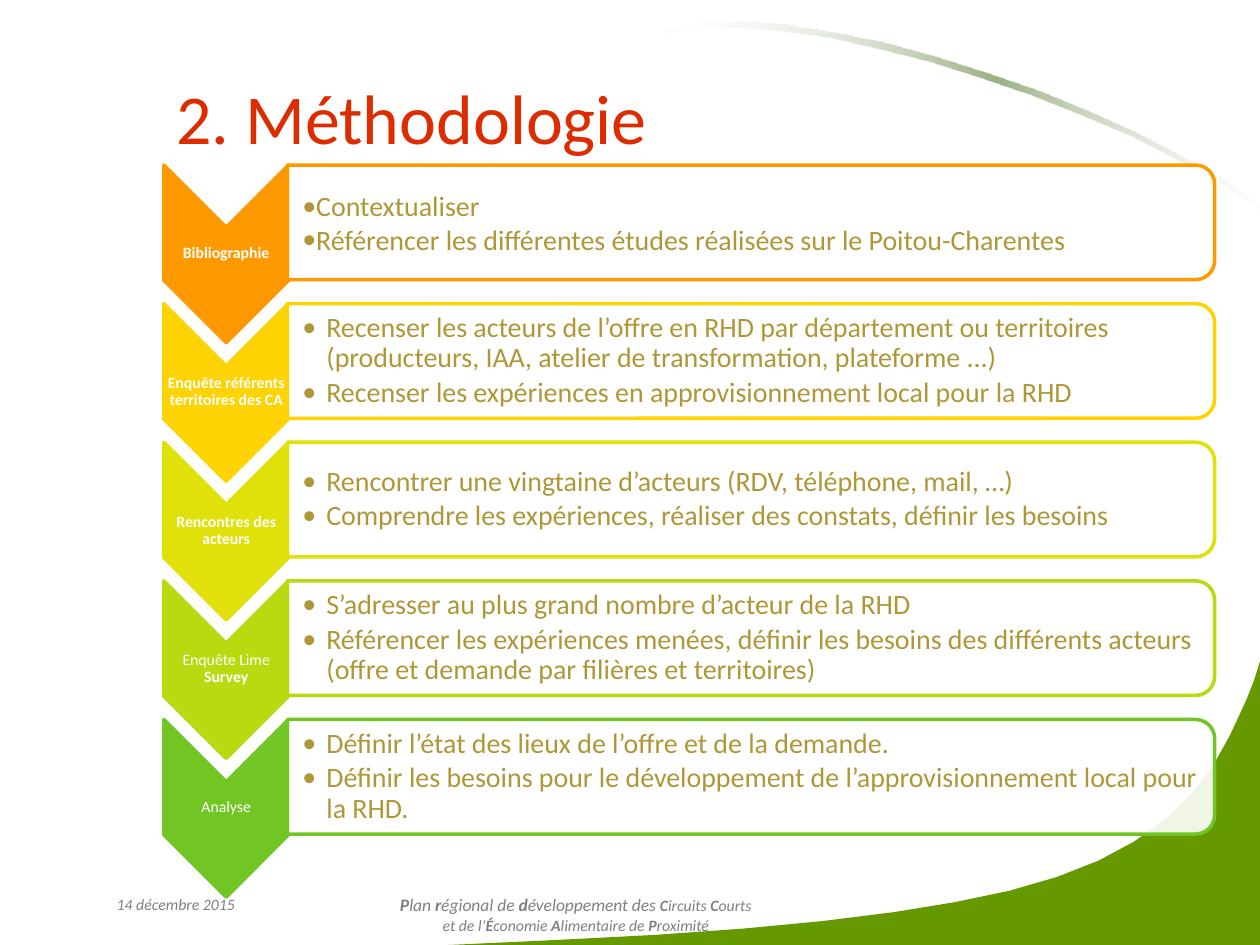
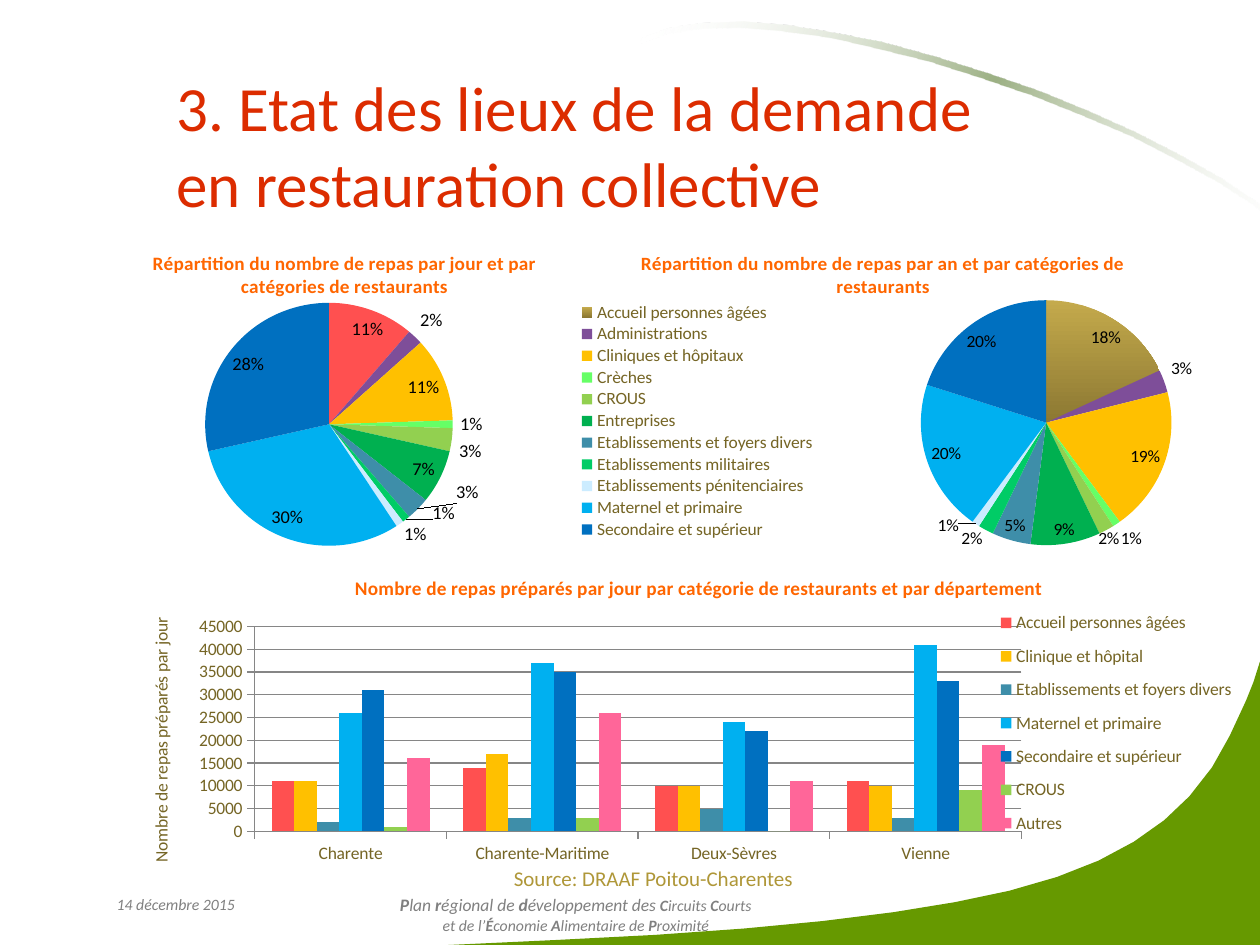
import pptx
import pptx.chart.data
import pptx.dml.color
import pptx.enum.chart
import pptx.enum.shapes
import pptx.enum.text
import pptx.oxml.ns
import pptx.util
from lxml import etree

Inches = pptx.util.Inches
Pt = pptx.util.Pt
qn = pptx.oxml.ns.qn
ALIGN = pptx.enum.text.PP_ALIGN
ANCHOR = pptx.enum.text.MSO_ANCHOR
SHAPE = pptx.enum.shapes.MSO_SHAPE
CHART = pptx.enum.chart.XL_CHART_TYPE

FONT = "Calibri"
TITLE_RED, HEADING_ORANGE = "DC2C00", "FF6600"
BODY_GOLD, LABEL_BROWN = "AF9738", "756525"
FOOTER_GREY, AXIS_GREY = "808080", "868686"
HILL_GREEN, ARC_GREEN = "669900", "9CB084"
WHITE, BLACK = "FFFFFF", "000000"

HILL = [
    (10, 5.25), (10, 7.5), (3.56, 7.5), (4.42, 7.46), (5.2, 7.42), (5.9, 7.37),
    (6.53, 7.31), (7.09, 7.24), (7.58, 7.16), (8.01, 7.07), (8.39, 6.96),
    (8.72, 6.83), (9, 6.68), (9.24, 6.51), (9.44, 6.32), (9.62, 6.09),
    (9.76, 5.84), (9.89, 5.56), (9.95, 5.41),
]
ARC = [
    (5.08, 0.35), (5.1, 0.3), (5.32, 0.22), (5.6, 0.18), (5.91, 0.17), (6.26, 0.2),
    (6.63, 0.26), (7.03, 0.34), (7.43, 0.45), (7.84, 0.58), (8.25, 0.72),
    (8.64, 0.88), (9.02, 1.05), (9.37, 1.23), (9.69, 1.41), (9.96, 1.59),
    (10.19, 1.77), (10.36, 1.95), (10.35, 1.97), (10.17, 1.8), (9.94, 1.62),
    (9.66, 1.44), (9.33, 1.26), (8.98, 1.08), (8.6, 0.92), (8.2, 0.76),
    (7.79, 0.62), (7.38, 0.49), (6.98, 0.39), (6.59, 0.3), (6.22, 0.25),
    (5.87, 0.22), (5.56, 0.23), (5.3, 0.27),
]

# Asterisks enclose bold text.
FOOTER = [
    [("*P*lan *r*égional de *d*éveloppement des ", 10), ("*C*ircuits *C*ourts", 9)],
    [("et de l’*É*conomie *A*limentaire de *P*roximité", 9)],
]
STEPS = [
    ("*Bibliographie*", "FF9900", [
        "Contextualiser",
        "Référencer les différentes études réalisées sur le Poitou-Charentes"]),
    ("*Enquête référents territoires des CA*", "FDD303", [
        "Recenser les acteurs de l’offre en RHD par département ou territoires "
        "(producteurs, IAA, atelier de transformation, plateforme ...)",
        "Recenser les expériences en approvisionnement local pour la RHD"]),
    ("*Rencontres des acteurs*", "E0E00A", [
        "Rencontrer une vingtaine d’acteurs (RDV, téléphone, mail, …)",
        "Comprendre les expériences, réaliser des constats, définir les besoins"]),
    ("Enquête Lime *Survey*", "B8DA10", [
        "S’adresser au plus grand nombre d’acteur de la RHD",
        "Référencer les expériences menées, définir les besoins des différents "
        "acteurs (offre et demande par filières et territoires)"]),
    ("Analyse", "71C525", [
        "Définir l’état des lieux de l’offre et de la demande.",
        "Définir les besoins pour le développement de l’approvisionnement local "
        "pour la RHD."]),
]
RESTAURANTS = [  # category, slice colour, share per day, share per year
    ("Accueil personnes âgées", "FF5050", 11, 18),
    ("Administrations", "7E4E99", 2, 3),
    ("Cliniques et hôpitaux", "FFC000", 11, 19),
    ("Crèches", "66FF66", 1, 1),
    ("CROUS", "92D050", 3, 2),
    ("Entreprises", "00B050", 7, 9),
    ("Etablissements et foyers divers", "3E8EA9", 3, 5),
    ("Etablissements militaires", "00CC66", 1, 2),
    ("Etablissements pénitenciaires", "CCECFF", 1, 1),
    ("Maternel et primaire", "00B0F0", 30, 20),
    ("Secondaire et supérieur", "0070C0", 28, 20),
]
DEPARTMENTS = ["Charente", "Charente-Maritime", "Deux-Sèvres", "Vienne"]
MEALS = [
    ("Accueil personnes âgées", "FF5050", (11000, 14000, 10000, 11000)),
    ("Clinique et hôpital", "FFC000", (11000, 17000, 10000, 10000)),
    ("Etablissements et foyers divers", "3E8EA9", (2000, 3000, 5000, 3000)),
    ("Maternel et primaire", "00B0F0", (26000, 37000, 24000, 41000)),
    ("Secondaire et supérieur", "0070C0", (31000, 35000, 22000, 33000)),
    ("CROUS", "92D050", (1000, 3000, 0, 9000)),
    ("Autres", "FF6699", (16000, 26000, 11000, 19000)),
]


def rgb(code):
    return pptx.dml.color.RGBColor.from_string(code)


def style(font, size, color, bold=False, italic=False):
    font.name, font.size, font.bold, font.italic = FONT, Pt(size), bold, italic
    font.color.rgb = rgb(color)


def write(paragraph, marked, size, color, italic=False):
    """Append text, with the parts between asterisks in bold."""
    for i, part in enumerate(marked.split("*")):
        if part:
            run = paragraph.add_run()
            run.text = part
            style(run.font, size, color, i % 2 == 1, italic)


def text_box(slide, box, anchor=ANCHOR.TOP, insets=(0.1, 0.05, 0.1, 0.05)):
    frame = slide.shapes.add_textbox(*map(Inches, box)).text_frame
    frame.word_wrap = True
    frame.vertical_anchor = anchor
    (frame.margin_left, frame.margin_top,
     frame.margin_right, frame.margin_bottom) = map(Inches, insets)
    return frame


def paragraphs(frame, count):
    return [frame.paragraphs[0]] + [frame.add_paragraph() for _ in range(count - 1)]


def outline(slide, points):
    """Draw a closed outline through points given in inches."""
    corners = [(Inches(x), Inches(y)) for x, y in points]
    pen = slide.shapes.build_freeform(*corners[0], scale=1.0)
    pen.add_line_segments(corners[1:], close=True)
    shape = pen.convert_to_shape()
    shape.shadow.inherit = False
    shape.line.fill.background()
    return shape


def fade_ends(shape, color, angle):
    """Fill with a gradient that is transparent at both ends."""
    shape.fill.gradient()
    gradient = shape._element.spPr.find(qn("a:gradFill"))
    for child in list(gradient):
        gradient.remove(child)
    stops = etree.SubElement(gradient, qn("a:gsLst"))
    for position, code, alpha in ((0, WHITE, 0), (50, color, 100), (100, WHITE, 0)):
        stop = etree.SubElement(stops, qn("a:gs"), pos=str(position * 1000))
        tint = etree.SubElement(stop, qn("a:srgbClr"), val=code)
        etree.SubElement(tint, qn("a:alpha"), val=str(alpha * 1000))
    etree.SubElement(gradient, qn("a:lin"), ang=str(int(angle * 60000)), scaled="0")


def add_page(deck, title, box, size):
    """Add a slide with the shared backdrop, footers and title."""
    slide = deck.slides.add_slide(deck.slide_layouts[5])
    hill = outline(slide, HILL)
    hill.fill.solid()
    hill.fill.fore_color.rgb = rgb(HILL_GREEN)
    fade_ends(outline(slide, ARC), ARC_GREEN, 21.8)

    date = text_box(slide, (0.78, 7.05, 1.23, 0.4)).paragraphs[0]
    date.alignment = ALIGN.CENTER
    write(date, "14 décembre 2015", 9, FOOTER_GREY, italic=True)
    plan = text_box(slide, (2.17, 7.05, 4.8, 0.4))
    for paragraph, pieces in zip(paragraphs(plan, len(FOOTER)), FOOTER):
        paragraph.alignment = ALIGN.CENTER
        for marked, points in pieces:
            write(paragraph, marked, points, FOOTER_GREY, italic=True)

    heading = slide.shapes.title
    heading.left, heading.top, heading.width, heading.height = map(Inches, box)
    heading.text_frame.vertical_anchor = ANCHOR.MIDDLE
    heading.text_frame.text = title
    paragraph = heading.text_frame.paragraphs[0]
    paragraph.alignment = ALIGN.LEFT
    style(paragraph.runs[0].font, size, TITLE_RED)
    return slide


def quarter_turned(slide, preset, box, fill, line):
    """Add a shape turned by 90 degrees that covers the given box."""
    left, top, width, height = box
    shape = slide.shapes.add_shape(
        preset, Inches(left + (width - height) / 2),
        Inches(top + (height - width) / 2), Inches(height), Inches(width))
    shape.rotation = 90
    shape.shadow.inherit = False
    shape.fill.solid()
    shape.fill.fore_color.rgb = rgb(fill)
    shape.line.color.rgb = rgb(line)
    shape.line.width = Pt(2)
    return shape


def bullet(paragraph, indent):
    properties = paragraph._p.get_or_add_pPr()
    properties.set("marL", str(Inches(indent)))
    properties.set("indent", str(-Inches(indent)))
    etree.SubElement(properties, qn("a:buFont"), typeface=FONT)
    etree.SubElement(properties, qn("a:buChar"), char="•")


def add_step(slide, left, top, step, compact):
    label, color, tasks = step
    quarter_turned(slide, SHAPE.CHEVRON, (left, top, 0.99, 1.41), color, color)
    name = text_box(slide, (left, top + 0.49, 0.99, 0.42), ANCHOR.MIDDLE, [0.01] * 4)
    name.paragraphs[0].alignment = ALIGN.CENTER
    name.paragraphs[0].line_spacing = 0.9
    write(name.paragraphs[0], label, 9, WHITE)

    panel = quarter_turned(slide, SHAPE.ROUND_2_SAME_RECTANGLE,
                           (left + 0.98, top, 7.36, 0.91), WHITE, color)
    tint = panel._element.spPr.find(qn("a:solidFill"))[0]
    etree.SubElement(tint, qn("a:alpha"), val="90000")
    body = text_box(slide, (left + 0.98, top + 0.04, 7.32, 0.83), ANCHOR.MIDDLE,
                    (0.12, 0.01, 0.01, 0.01))
    for paragraph, task in zip(paragraphs(body, len(tasks)), tasks):
        bullet(paragraph, 0.19 if compact else 0)
        if compact:
            paragraph.line_spacing = 0.9
            paragraph.space_after = Pt(2.4)
        write(paragraph, task, 16, BODY_GOLD)


def place(parent, index, box):
    """Set the manual layout of a chart part, in fractions of the chart."""
    for old in parent.findall(qn("c:layout")):
        parent.remove(old)
    layout = etree.Element(qn("c:layout"))
    parent.insert(index, layout)
    manual = etree.SubElement(layout, qn("c:manualLayout"))
    if index == 0:
        etree.SubElement(manual, qn("c:layoutTarget"), val="inner")
    for axis in "xy":
        etree.SubElement(manual, qn(f"c:{axis}Mode"), val="edge")
    for side, fraction in zip("xywh", box):
        etree.SubElement(manual, qn(f"c:{side}"), val=str(fraction))


def add_chart(slide, kind, box, data, title, size, plot_box, legend_box=None):
    chart = slide.shapes.add_chart(kind, *map(Inches, box), data).chart
    style(chart.font, size, BLACK)
    space = chart._chartSpace
    backing = etree.Element(qn("c:spPr"))
    etree.SubElement(backing, qn("a:noFill"))
    etree.SubElement(etree.SubElement(backing, qn("a:ln")), qn("a:noFill"))
    space.find(qn("c:chart")).addnext(backing)

    chart.has_title = True
    chart.chart_title.text_frame.text = title
    style(chart.chart_title.text_frame.paragraphs[0].runs[0].font, 11,
          HEADING_ORANGE, bold=True)
    place(space.find(".//" + qn("c:plotArea")), 0, plot_box)
    chart.has_legend = legend_box is not None
    if legend_box:
        chart.legend.position = pptx.enum.chart.XL_LEGEND_POSITION.RIGHT
        chart.legend.include_in_layout = False
        style(chart.legend.font, 10, LABEL_BROWN)
        place(chart.legend._element, 1, legend_box)
    return chart


def add_share_pie(slide, box, title, shares, size, plot_box, legend_box=None):
    data = pptx.chart.data.CategoryChartData()
    data.categories = [row[0] for row in RESTAURANTS]
    data.add_series("Repas", shares)
    chart = add_chart(slide, CHART.PIE, box, data, title, size, plot_box, legend_box)
    plot = chart.plots[0]
    plot.vary_by_categories = True
    for i, row in enumerate(RESTAURANTS):
        fill = plot.series[0].points[i].format.fill
        fill.solid()
        fill.fore_color.rgb = rgb(row[1])
    plot.has_data_labels = True
    labels = plot.data_labels
    labels.show_value = True
    labels.number_format = '0"%"'
    labels.number_format_is_linked = False
    labels.position = pptx.enum.chart.XL_LABEL_POSITION.BEST_FIT
    style(labels.font, size, BLACK)
    return chart


def add_meals_columns(slide, box):
    data = pptx.chart.data.CategoryChartData()
    data.categories = DEPARTMENTS
    for name, _, values in MEALS:
        data.add_series(name, values)
    chart = add_chart(
        slide, CHART.COLUMN_CLUSTERED, box, data,
        "Nombre de repas préparés par jour par catégorie de restaurants et par département",
        10, (0.1, 0.18, 0.69, 0.53), (0.76, 0.11, 0.23, 0.64))
    plot = chart.plots[0]
    plot.vary_by_categories = False
    plot.gap_width, plot.overlap = 150, 0
    for series, (_, color, _) in zip(plot.series, MEALS):
        series.format.fill.solid()
        series.format.fill.fore_color.rgb = rgb(color)
    for axis in (chart.category_axis, chart.value_axis):
        style(axis.tick_labels.font, 10, LABEL_BROWN)
        axis.format.line.color.rgb = rgb(AXIS_GREY)
        axis.major_tick_mark = pptx.enum.chart.XL_TICK_MARK.OUTSIDE
    scale = chart.value_axis
    scale.minimum_scale, scale.maximum_scale, scale.major_unit = 0, 45000, 5000
    scale.has_major_gridlines = True
    scale.major_gridlines.format.line.color.rgb = rgb(AXIS_GREY)
    scale.axis_title.text_frame.text = "Nombre de repas préparés par jour"
    style(scale.axis_title.text_frame.paragraphs[0].runs[0].font, 10, LABEL_BROWN)


def add_method_slide(deck):
    slide = add_page(deck, "2. Méthodologie", (1.3, 0.3, 8.45, 1.25), 40)
    for i, step in enumerate(STEPS):
        add_step(slide, 1.3, 1.31 + 1.1 * i, step, compact=i > 0)


def add_demand_slide(deck):
    slide = add_page(deck, "3. Etat des lieux de la demande en restauration collective",
                     (1.3, 0.52, 6.54, 1.25), 36)
    add_share_pie(slide, (0.67, 1.86, 4.13, 2.52),
                  "Répartition du nombre de repas par jour et par catégories de restaurants",
                  [row[2] for row in RESTAURANTS], 10.5, (0.22, 0.22, 0.5, 0.78))
    add_meals_columns(slide, (1.14, 4.42, 8.82, 3.07))
    source = text_box(slide, (3.98, 6.82, 2.44, 0.3))
    write(source.paragraphs[0], "Source: DRAAF Poitou-Charentes", 12, BODY_GOLD)
    yearly = add_share_pie(
        slide, (4.37, 1.86, 5.28, 2.55),
        "Répartition du nombre de repas par an et par catégories de restaurants",
        [row[3] for row in RESTAURANTS], 10, (0.51, 0.21, 0.47, 0.78),
        (0.02, 0.21, 0.4, 0.77))
    elderly = yearly.plots[0].series[0].points[0].format.fill
    elderly.gradient()
    elderly.gradient_angle = 270
    for stop, color in zip(elderly.gradient_stops, ("C4AA4C", "8C7832")):
        stop.color.rgb = rgb(color)


def main():
    deck = pptx.Presentation()
    deck.slide_width, deck.slide_height = Inches(10), Inches(7.5)
    add_method_slide(deck)
    add_demand_slide(deck)
    deck.save("out.pptx")


if __name__ == "__main__":
    main()
